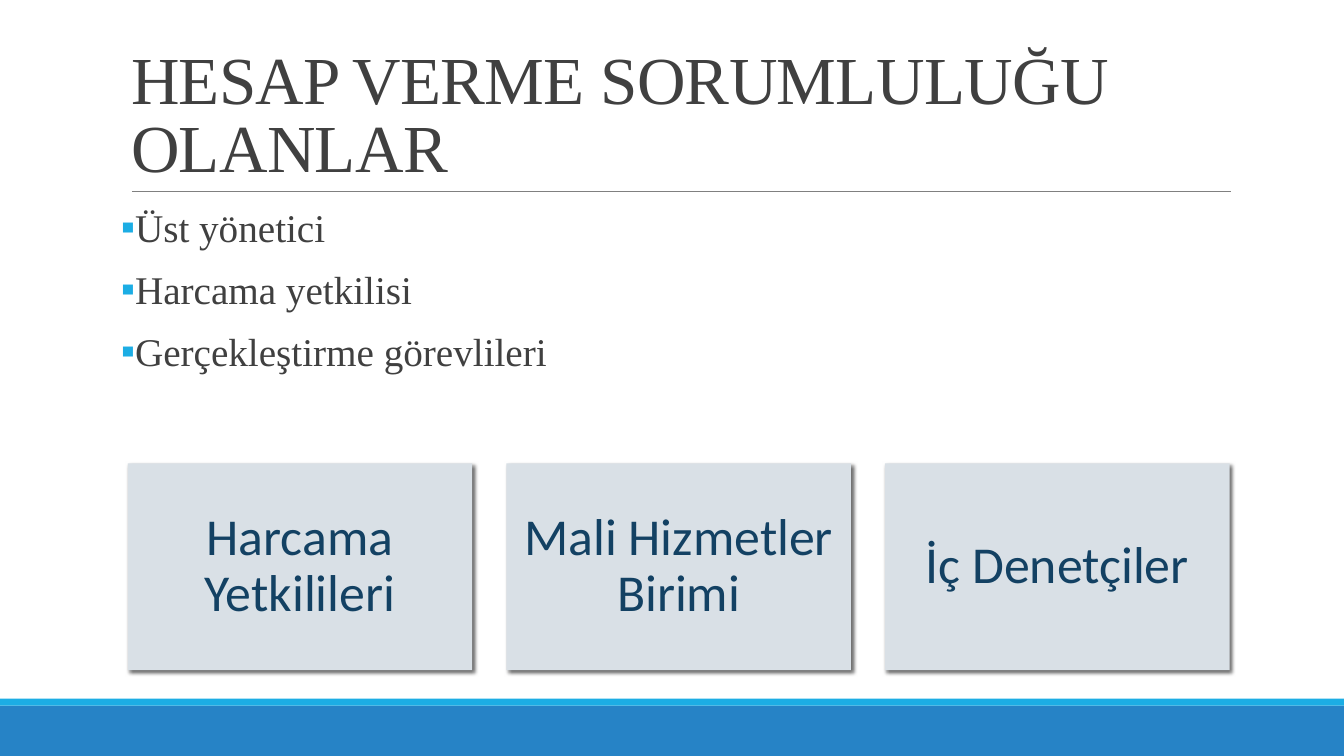
"""Build a slide on who bears accountability: title, bullet list and three cards."""
from lxml import etree
from pptx import Presentation
from pptx.dml.color import RGBColor
from pptx.enum.shapes import MSO_CONNECTOR, MSO_SHAPE
from pptx.enum.text import MSO_ANCHOR, PP_ALIGN
from pptx.oxml.ns import qn
from pptx.util import Pt

RECT = MSO_SHAPE.RECTANGLE
STRAIGHT = MSO_CONNECTOR.STRAIGHT
BOTTOM, MIDDLE = MSO_ANCHOR.BOTTOM, MSO_ANCHOR.MIDDLE
CENTER = PP_ALIGN.CENTER
SERIF, SANS = "Times New Roman", "Calibri"
DARK, BLUE, CYAN = "404040", "2683C6", "1CADE4"


def rgb(value):
    return RGBColor.from_string(value)


def add_run(p, text, font, size, color):
    r = p.add_run()
    r.text = text
    r.font.name = font
    r.font.size = Pt(size)
    r.font.color.rgb = rgb(color)
    return r


prs = Presentation()
prs.slide_width, prs.slide_height = Pt(960), Pt(540)
s = prs.slides.add_slide(prs.slide_layouts[6])

for top, height, color in ((504, 36, BLUE), (499, 5, CYAN)):
    sp = s.shapes.add_shape(RECT, 0, Pt(top), Pt(960), Pt(height))
    sp.shadow.inherit = False
    sp.fill.solid()
    sp.fill.fore_color.rgb = rgb(color)
    sp.line.fill.background()

rule = s.shapes.add_connector(STRAIGHT, Pt(94.3), Pt(136.8), Pt(879), Pt(136.8))
rule.line.color.rgb = rgb("808080")
rule.line.width = Pt(0.5)
etree.SubElement(rule._element.spPr, qn("a:effectLst"))

title = s.shapes.add_textbox(Pt(86.6), Pt(22.6), Pt(792), Pt(114.2))
tf = title.text_frame
tf.word_wrap = True
tf.vertical_anchor = BOTTOM
p = tf.paragraphs[0]
p.line_spacing = 0.85
r = add_run(p, "HESAP VERME SORUMLULUĞU OLANLAR", SERIF, 48, DARK)
r._r.get_or_add_rPr().set("spc", "-50")

body = s.shapes.add_textbox(Pt(86.6), Pt(145.4), Pt(792), Pt(316.8))
tf = body.text_frame
tf.word_wrap = True
tf.margin_left = tf.margin_right = 0
items = ("Üst yönetici", "Harcama yetkilisi", "Gerçekleştirme görevlileri")
for i, item in enumerate(items):
    p = tf.add_paragraph() if i else tf.paragraphs[0]
    p.line_spacing = 0.9
    p.space_before, p.space_after = Pt(12), Pt(2)
    pPr = p._p.get_or_add_pPr()
    pPr.set("marL", str(Pt(7.2)))
    pPr.set("indent", str(Pt(-7.2)))
    color = etree.SubElement(pPr, qn("a:buClr"))
    etree.SubElement(color, qn("a:srgbClr"), val=CYAN)
    etree.SubElement(pPr, qn("a:buFont"), typeface=SANS)
    etree.SubElement(pPr, qn("a:buChar"), char="▪")
    add_run(p, item, SERIF, 28, DARK)

cards = ("Harcama Yetkilileri", "Mali Hizmetler Birimi", "İç Denetçiler")
for i, card in enumerate(cards):
    sp = s.shapes.add_shape(RECT, Pt(91.3 + i * 270.5), Pt(331), Pt(246), Pt(147.6))
    sp.fill.solid()
    sp.fill.fore_color.rgb = rgb("D9E0E6")
    sp.line.fill.background()
    sp.shadow.inherit = False
    effects = sp._element.spPr.find(qn("a:effectLst"))
    shadow = etree.SubElement(effects, qn("a:outerShdw"), blurRad=str(Pt(3)),
                              dist=str(Pt(2)), dir="2700000", rotWithShape="0")
    color = etree.SubElement(shadow, qn("a:srgbClr"), val="000000")
    etree.SubElement(color, qn("a:alpha"), val="60000")
    tf = sp.text_frame
    tf.word_wrap = True
    tf.vertical_anchor = MIDDLE
    tf.margin_left = tf.margin_right = tf.margin_top = tf.margin_bottom = Pt(10.8)
    p = tf.paragraphs[0]
    p.alignment = CENTER
    p.line_spacing = 0.9
    add_run(p, card, SANS, 37, "134163")

prs.save("out.pptx")
